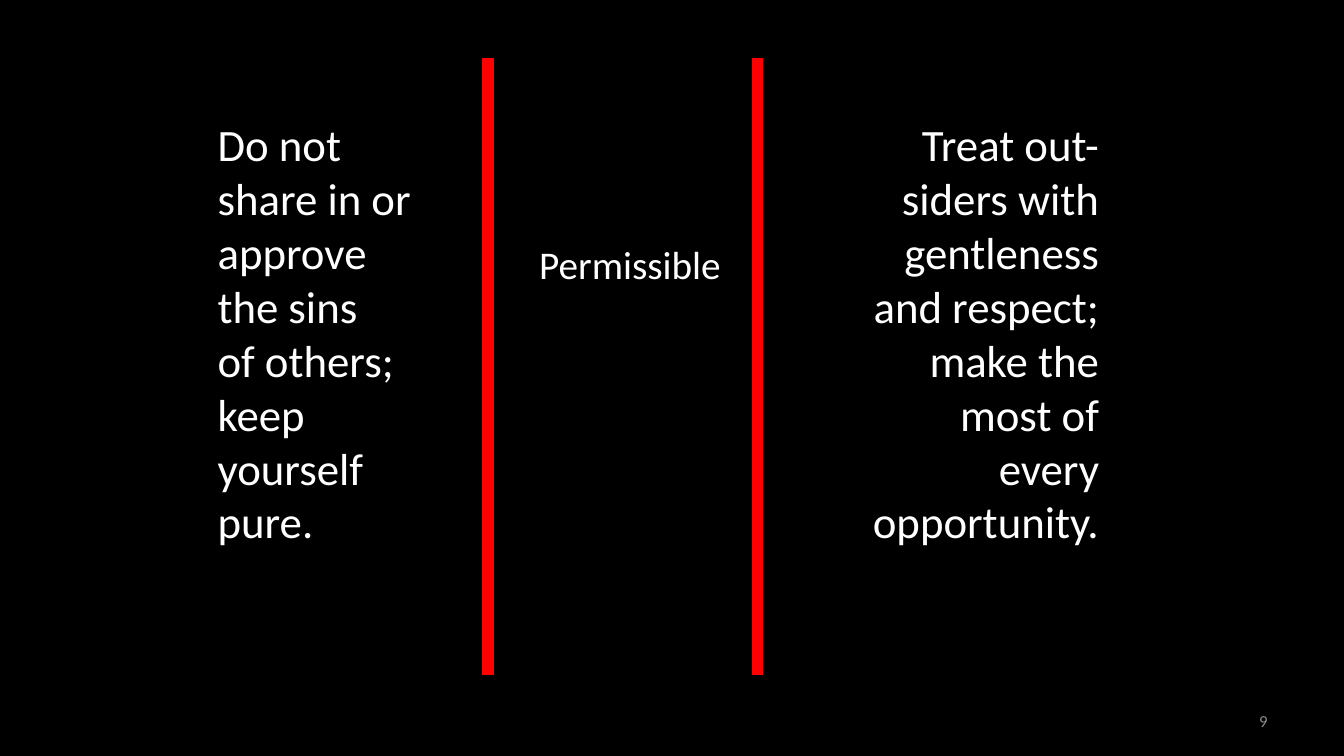
from lxml import etree
from pptx import Presentation
from pptx.dml.color import RGBColor
from pptx.enum.shapes import MSO_CONNECTOR
from pptx.enum.text import MSO_ANCHOR, PP_ALIGN
from pptx.oxml.ns import qn
from pptx.util import Inches, Pt

WIDTH, HEIGHT = 13.33, 7.5
BLACK, WHITE, RED, GREY = "000000", "FFFFFF", "FF0000", "8C8C8C"
DIVIDERS = (4.84, 7.51)
DIVIDER_TOP, DIVIDER_BOTTOM = 0.58, 6.7
COLUMN_TOP, COLUMN_HEIGHT = 1.11, 6.04

LEFT_TEXT = "Do not \vshare in or approve \vthe sins\vof others; keep yourself pure."
RIGHT_TEXT = ("Treat out-siders with gentleness and respect; "
              "make the most of every opportunity.")


def color(hex_string):
    return RGBColor.from_string(hex_string)


def add_text(slide, box, text, size, fill=WHITE, align=PP_ALIGN.LEFT,
             anchor=MSO_ANCHOR.TOP):
    """Add a wrapped one-paragraph text box and return its paragraph."""
    frame = slide.shapes.add_textbox(*map(Inches, box)).text_frame
    frame.word_wrap = True
    frame.vertical_anchor = anchor
    paragraph = frame.paragraphs[0]
    paragraph.text = text
    paragraph.alignment = align
    paragraph.font.name = "Calibri"
    paragraph.font.size = Pt(size)
    paragraph.font.color.rgb = color(fill)
    return paragraph


def add_column(slide, left, width, text, align):
    box = (left, COLUMN_TOP, width, COLUMN_HEIGHT)
    paragraph = add_text(slide, box, text, 32, align=align)
    paragraph.line_spacing = Pt(38.5)
    paragraph.space_after = Pt(12)


def add_divider(slide, x):
    divider = slide.shapes.add_connector(
        MSO_CONNECTOR.STRAIGHT, Inches(x), Inches(DIVIDER_TOP),
        Inches(x), Inches(DIVIDER_BOTTOM))
    divider.line.color.rgb = color(RED)
    divider.line.width = Pt(8)
    etree.SubElement(divider._element.spPr, qn("a:effectLst"))


def build_boundaries_slide(presentation):
    slide = presentation.slides.add_slide(presentation.slide_layouts[6])
    background = slide.background.fill
    background.solid()
    background.fore_color.rgb = color(BLACK)

    add_column(slide, 2.06, 2.17, LEFT_TEXT, PP_ALIGN.LEFT)
    add_text(slide, (5.25, 2.33, 2.07, 0.88), "Permissible", 28)
    add_column(slide, 8.5, 2.5, RIGHT_TEXT, PP_ALIGN.RIGHT)
    for x in DIVIDERS:
        add_divider(slide, x)
    add_text(slide, (9.56, 6.95, 3.11, 0.4), "9", 12, GREY,
             PP_ALIGN.RIGHT, MSO_ANCHOR.MIDDLE)


def main():
    presentation = Presentation()
    presentation.slide_width = Inches(WIDTH)
    presentation.slide_height = Inches(HEIGHT)
    build_boundaries_slide(presentation)
    presentation.save("out.pptx")


if __name__ == "__main__":
    main()
